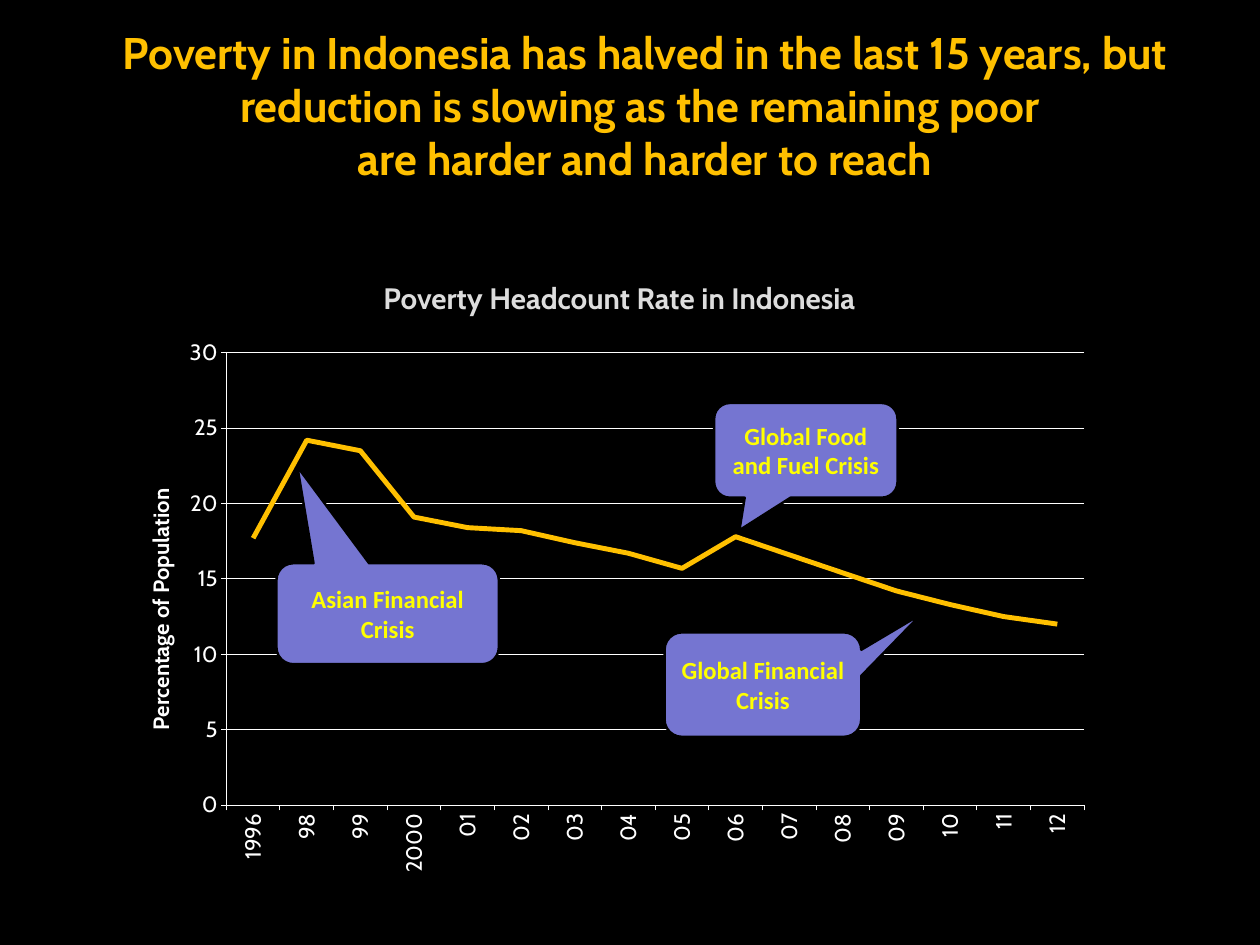
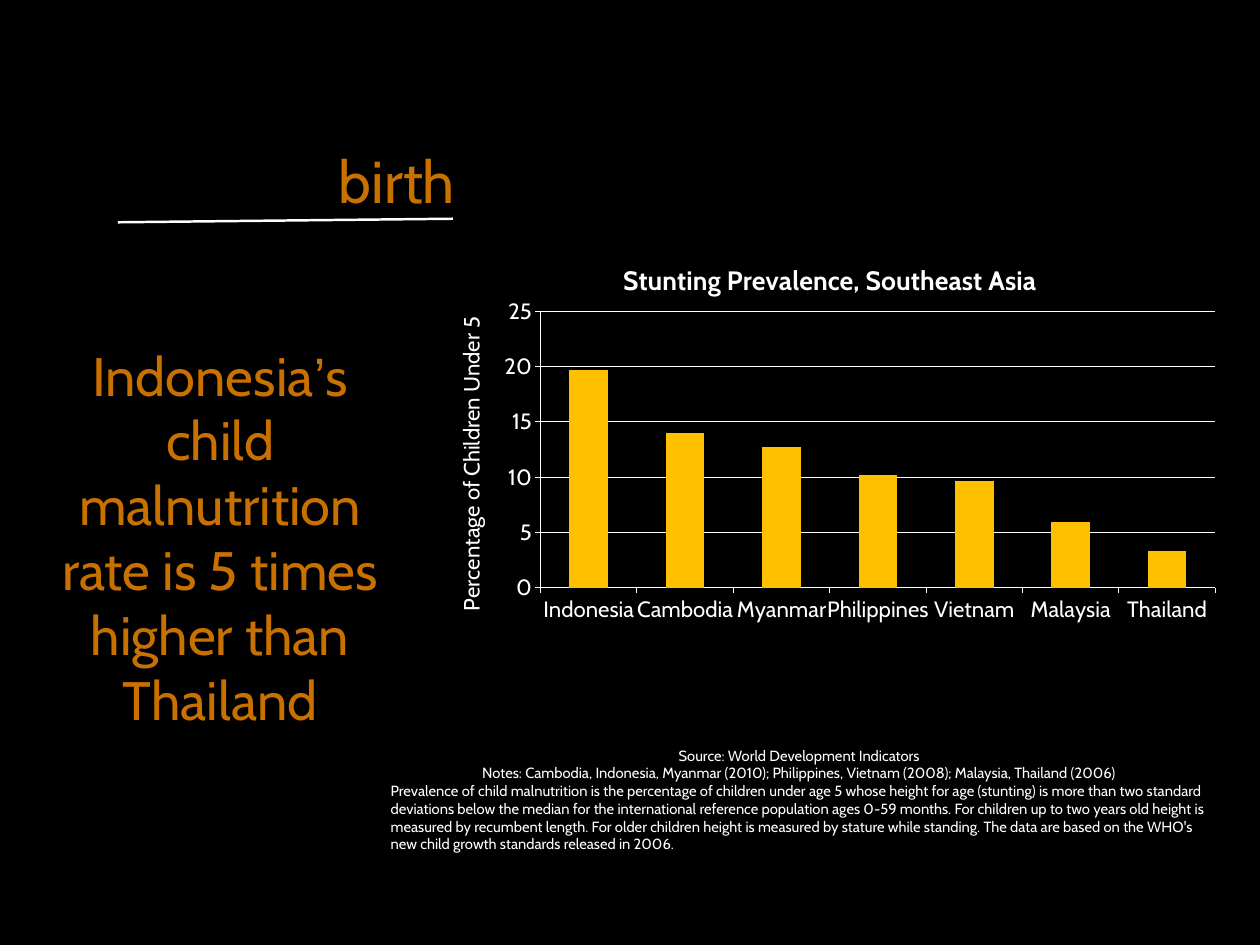
import collections

import pptx
import pptx.chart.data
import pptx.dml.color
import pptx.enum.chart
import pptx.enum.shapes
import pptx.enum.text
import pptx.oxml
import pptx.oxml.ns
import pptx.util

PX = 9144  # 100 px to the inch
WIDTH, HEIGHT = 1422, 1067
HEAD_FONT, CALLOUT_FONT, QUOTE_FONT = "Cabin", "Calibri", "Arial"
BLACK, WHITE, GOLD, ORANGE = "000000", "FFFFFF", "FFC000", "C97100"
GREY, VIOLET, YELLOW = "DDDDDD", "7575D1", "FFFF00"

CENTER = pptx.enum.text.PP_ALIGN.CENTER
LEFT = pptx.enum.text.PP_ALIGN.LEFT
TOP = pptx.enum.text.MSO_ANCHOR.TOP
MIDDLE = pptx.enum.text.MSO_ANCHOR.MIDDLE
INSETS = (10, 5, 10, 5)

Box = collections.namedtuple("Box", "x y w h")
qn = pptx.oxml.ns.qn


def within(box, x, y, w, h):
    """Box offset by x, y from the corner of another box."""
    return Box(box.x + x, box.y + y, w, h)


def emu(*lengths):
    return [pptx.util.Emu(n * PX) for n in lengths]


def rgb(color):
    return pptx.dml.color.RGBColor.from_string(color)


def style_font(font, size, color, bold=False, name=HEAD_FONT):
    font.name, font.size, font.bold = name, pptx.util.Pt(size), bold
    font.color.rgb = rgb(color)


def style_line(line, color, width):
    line.color.rgb = rgb(color)
    line.width = pptx.util.Pt(width)


def write(sp, paragraphs, size, color, bold=False, name=HEAD_FONT,
          anchor=MIDDLE, insets=INSETS):
    """Fill a shape; each paragraph is (alignment, [(text, font name or None)])."""
    tf = sp.text_frame
    tf.word_wrap = True
    tf.auto_size = pptx.enum.text.MSO_AUTO_SIZE.NONE
    tf.vertical_anchor = anchor
    tf.margin_left, tf.margin_top, tf.margin_right, tf.margin_bottom = emu(*insets)
    for i, (align, runs) in enumerate(paragraphs):
        p = tf.add_paragraph() if i else tf.paragraphs[0]
        p.alignment = align
        p.space_before = pptx.util.Pt(0)
        for text, run_font in runs:
            r = p.add_run()
            r.text = text
            style_font(r.font, size, color, bold, run_font or name)


def centered(*texts):
    return [(CENTER, [(text, None)]) for text in texts]


def move(sp, box):
    sp.left, sp.top, sp.width, sp.height = emu(*box)


def remove_bullets(sp):
    for p in sp.text_frame.paragraphs:
        props = p._p.get_or_add_pPr()
        props.set("marL", "0")
        props.set("indent", "0")
        props.append(pptx.oxml.parse_xml(
            "<a:buNone %s/>" % pptx.oxml.ns.nsdecls("a")))


def add_text(slide, box, paragraphs, size, color, **style):
    write(slide.shapes.add_textbox(*emu(*box)), paragraphs, size, color, **style)


def add_callout(slide, box, text, tip):
    sp = slide.shapes.add_shape(
        pptx.enum.shapes.MSO_SHAPE.ROUNDED_RECTANGULAR_CALLOUT, *emu(*box))
    sp.shadow.inherit = False
    sp.fill.solid()
    sp.fill.fore_color.rgb = rgb(VIOLET)
    style_line(sp.line, BLACK, 2)
    sp.adjustments[0], sp.adjustments[1] = tip
    write(sp, centered(text), 20, YELLOW, bold=True, name=CALLOUT_FONT)


def add_rule(slide, x1, y1, x2, y2):
    line = slide.shapes.add_connector(
        pptx.enum.shapes.MSO_CONNECTOR.STRAIGHT, *emu(x1, y1, x2, y2))
    style_line(line.line, WHITE, 2)
    line._element.spPr.append(pptx.oxml.parse_xml(
        "<a:effectLst %s/>" % pptx.oxml.ns.nsdecls("a")))


def set_layout(parent, x, y, w=None, h=None):
    """Place a chart part by fractions of the chart."""
    old = parent.find(qn("c:layout"))
    if old is not None:
        parent.remove(old)
    parts = [("xMode", "edge"), ("yMode", "edge"), ("x", x), ("y", y)]
    if w is not None:
        parts = [("layoutTarget", "inner")] + parts + [("w", w), ("h", h)]
    inner = "".join('<c:%s val="%s"/>' % part for part in parts)
    layout = pptx.oxml.parse_xml(
        "<c:layout %s><c:manualLayout>%s</c:manualLayout></c:layout>"
        % (pptx.oxml.ns.nsdecls("c"), inner))
    parent.insert(0 if parent.find(qn("c:tx")) is None else 1, layout)


def title_text(title, text, size, bold, place):
    r = title.text_frame.paragraphs[0].add_run()
    r.text = text
    style_font(r.font, size, WHITE, bold)
    set_layout(title._element, *place)


def add_chart(slide, box, kind, data, top, plot):
    """Add a one-series chart with white axes on black; data is (label, value)."""
    chart_data = pptx.chart.data.CategoryChartData()
    chart_data.categories = [label for label, _ in data]
    chart_data.add_series("Series 1", [value for _, value in data])
    chart = slide.shapes.add_chart(kind, *emu(*box), chart_data).chart
    chart.has_legend = False
    chart.has_title = False
    style_font(chart.font, 18, WHITE)
    chart.plots[0].vary_by_categories = False
    for axis in (chart.category_axis, chart.value_axis):
        style_line(axis.format.line, WHITE, 0.75)
        style_font(axis.tick_labels.font, 18, WHITE)
        axis.major_tick_mark = pptx.enum.chart.XL_TICK_MARK.OUTSIDE
        axis.minor_tick_mark = pptx.enum.chart.XL_TICK_MARK.NONE
    axis = chart.value_axis
    axis.minimum_scale, axis.maximum_scale, axis.major_unit = 0, top, 5
    axis.has_major_gridlines = True
    style_line(axis.major_gridlines.format.line, WHITE, 0.75)
    set_layout(chart._chartSpace.chart.plotArea, *plot)
    return chart


def add_poverty_chart(slide, box):
    data = [("1996", 17.7), ("98", 24.2), ("99", 23.5), ("2000", 19.1),
            ("01", 18.4), ("02", 18.2), ("03", 17.4), ("04", 16.7),
            ("05", 15.7), ("06", 17.8), ("07", 16.6), ("08", 15.4),
            ("09", 14.2), ("10", 13.3), ("11", 12.5), ("12", 12)]
    chart = add_chart(slide, within(box, 0, 67, box.w, box.h - 67),
                      pptx.enum.chart.XL_CHART_TYPE.LINE, data, 30,
                      (0.114, 0.042, 0.866, 0.816))
    series = chart.plots[0].series[0]
    series.smooth = False
    series.marker.style = pptx.enum.chart.XL_MARKER_STYLE.NONE
    style_line(series.format.line, GOLD, 4)
    title_text(chart.value_axis.axis_title, "Percentage of Population",
               18, True, (0.028, 0.28))
    labels = chart.category_axis._element.find(qn("c:txPr"))
    labels.find(qn("a:bodyPr")).set("rot", "-5400000")

    add_text(slide, within(box, 188, 0, 766, 63),
             centered("Poverty Headcount Rate in Indonesia"), 24, GREY, bold=True)
    for place, text, tip in (
            ((184, 331, 251, 114), "Asian Financial Crisis", (-0.406, -1.457)),
            ((678, 150, 207, 107), "Global Food and Fuel Crisis", (-0.362, 0.843)),
            ((622, 409, 222, 118), "Global Financial Crisis", (0.807, -0.677))):
        add_callout(slide, within(box, *place), text, tip)


def add_stunting_chart(slide, box):
    data = [("Indonesia", 19.7), ("Cambodia", 14), ("Myanmar", 12.7),
            ("Philippines", 10.2), ("Vietnam", 9.7), ("Malaysia", 6),
            ("Thailand", 3.3)]
    chart = add_chart(slide, box, pptx.enum.chart.XL_CHART_TYPE.COLUMN_CLUSTERED,
                      data, 25, (0.148, 0.16, 0.834, 0.559))
    chart.plots[0].gap_width = 150
    series = chart.plots[0].series[0]
    series.invert_if_negative = False
    series.format.fill.solid()
    series.format.fill.fore_color.rgb = rgb(GOLD)
    chart.has_title = True
    title_text(chart.chart_title, "Stunting Prevalence, Southeast Asia",
               21.6, True, (0.244, 0.05))
    title_text(chart.value_axis.axis_title, "Percentage of Children Under 5",
               18, False, (0.038, 0.163))


def add_stage_heading(slide, box):
    move(slide.shapes.title, within(box, 217, 0, 196, box.h))
    write(slide.shapes.title, centered("birth"), 48, ORANGE, insets=(0, 0, 0, 0))
    add_rule(slide, box.x, box.y + 107, box.x + box.w, box.y + 103)


def add_statement(slide, box):
    body = slide.placeholders[1]
    move(body, box)
    runs = [("Indonesia", None), ("’", QUOTE_FONT),
            ("s child malnutrition rate is 5 times higher than Thailand", None)]
    write(body, [(CENTER, runs)], 44, ORANGE, insets=(0, 0, 0, 0))
    remove_bullets(body)


def add_notes_text(slide, box):
    definition = (
        "Prevalence of child malnutrition is the percentage of children under "
        "age 5 whose height for age (stunting) is more than two standard "
        "deviations below the median for the international reference population "
        "ages 0-59 months. For children up to two years old height is measured "
        "by recumbent length. For older children height is measured by stature "
        "while standing. The data are based on the WHO's new child growth "
        "standards released in 2006.")
    paragraphs = centered(
        "Source: World Development Indicators",
        "Notes: Cambodia, Indonesia, Myanmar (2010); Philippines, Vietnam (2008); "
        "Malaysia, Thailand (2006)")
    paragraphs.append((LEFT, [(definition, None)]))
    add_text(slide, box, paragraphs, 12, WHITE, anchor=TOP)


def add_poverty_slide(prs):
    slide = prs.slides.add_slide(prs.slide_layouts.get_by_name("Title Only"))
    move(slide.shapes.title, Box(81, 23, 1294, 107))
    write(slide.shapes.title, centered(
        "Poverty in Indonesia has halved in the last 15 years, but reduction "
        "is slowing as the remaining poor ",
        "are harder and harder to reach"), 36, GOLD, bold=True, anchor=TOP)
    add_poverty_chart(slide, Box(128, 305, 1118, 693))


def add_malnutrition_slide(prs):
    slide = prs.slides.add_slide(prs.slide_layouts.get_by_name("Title and Content"))
    add_stage_heading(slide, Box(133, 144, 378, 118))
    add_statement(slide, Box(49, 326, 399, 560))
    add_stunting_chart(slide, Box(475, 262, 913, 559))
    add_notes_text(slide, Box(431, 838, 942, 81))


def main():
    prs = pptx.Presentation()
    prs.slide_width, prs.slide_height = emu(WIDTH, HEIGHT)
    background = prs.slide_master.background.fill
    background.solid()
    background.fore_color.rgb = rgb(BLACK)
    add_poverty_slide(prs)
    add_malnutrition_slide(prs)
    prs.save("out.pptx")


if __name__ == "__main__":
    main()
